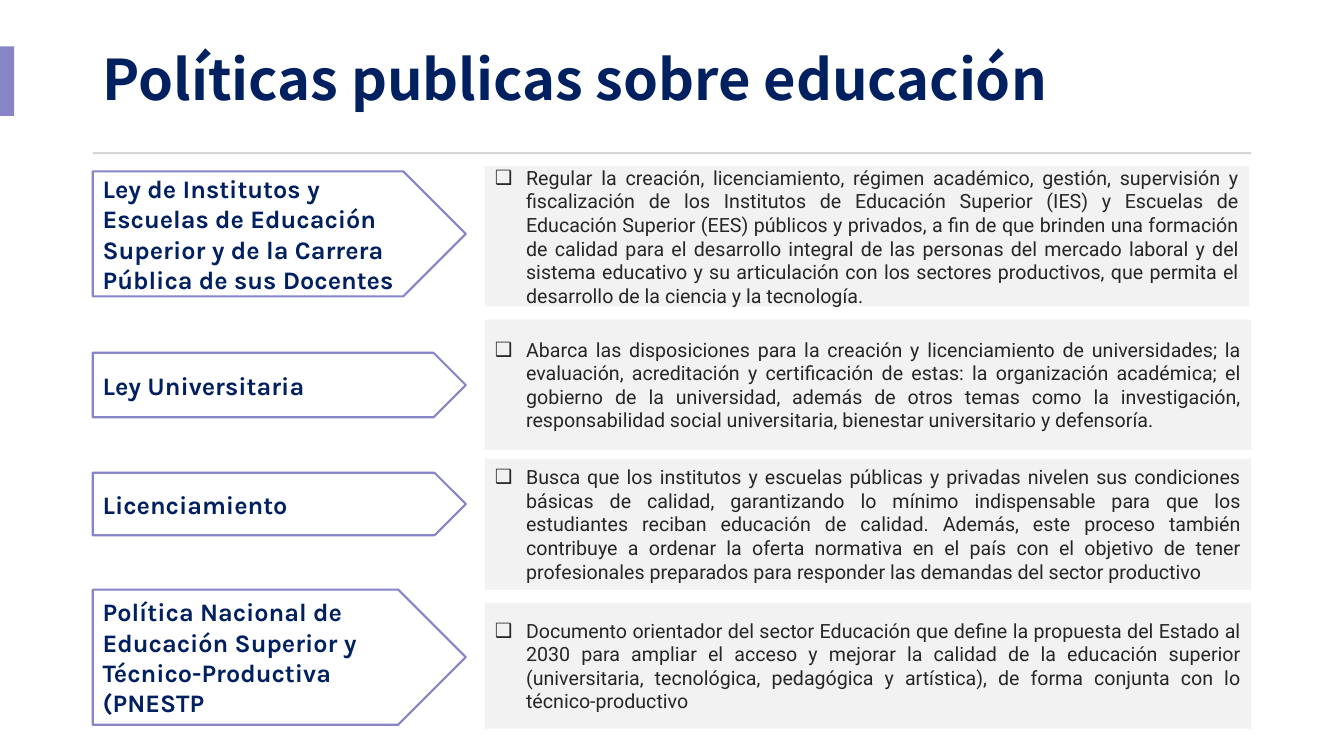
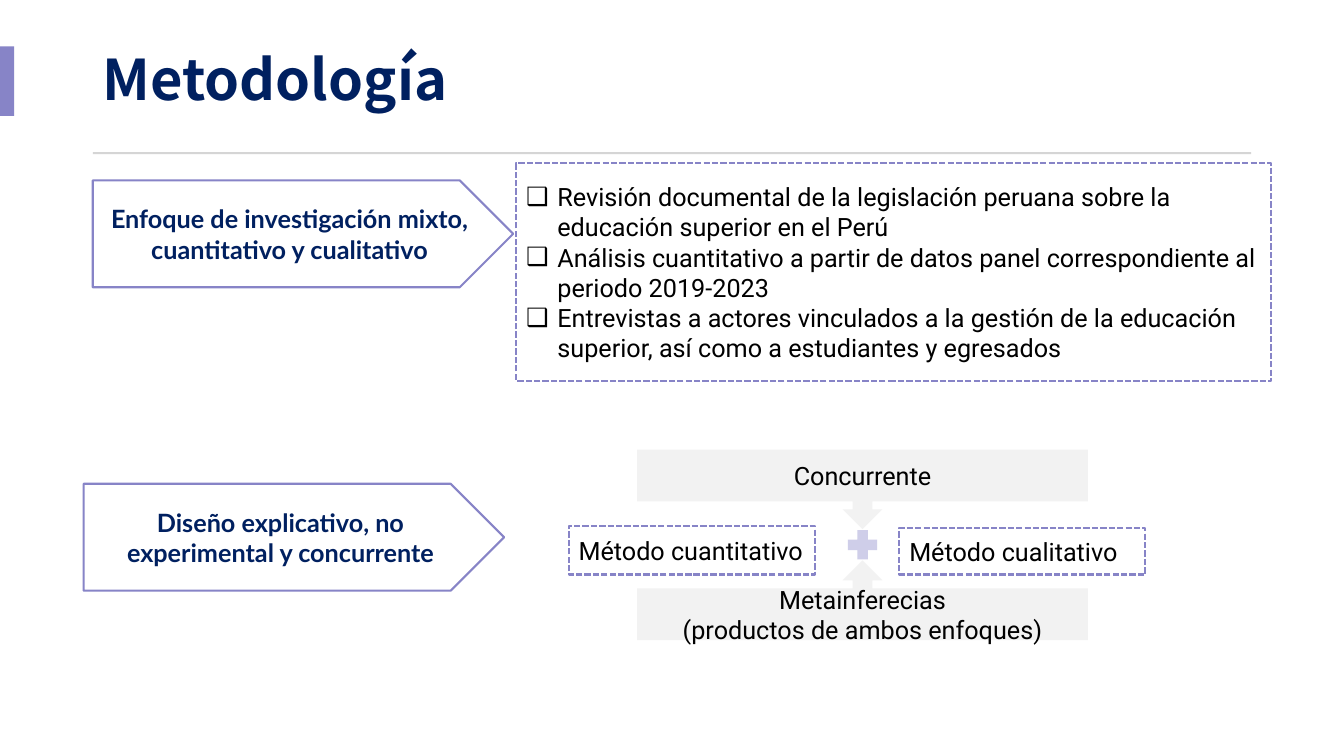
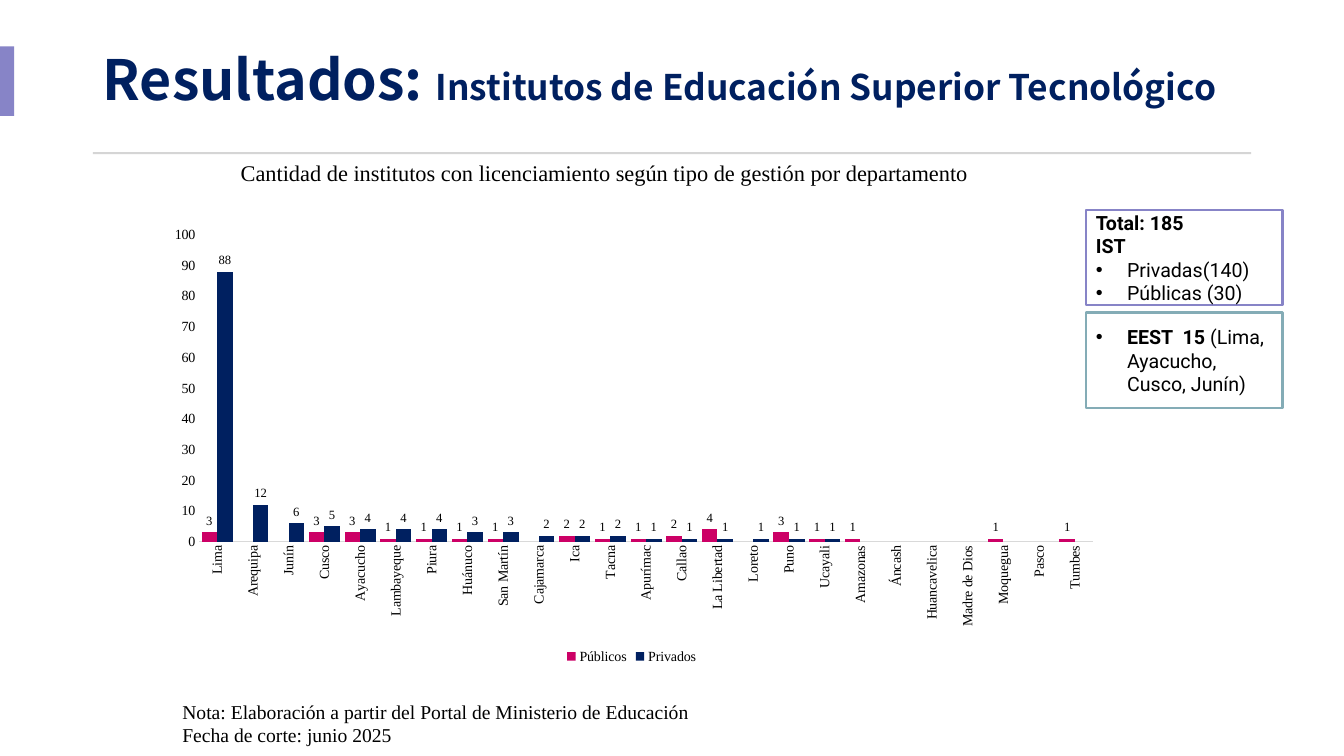
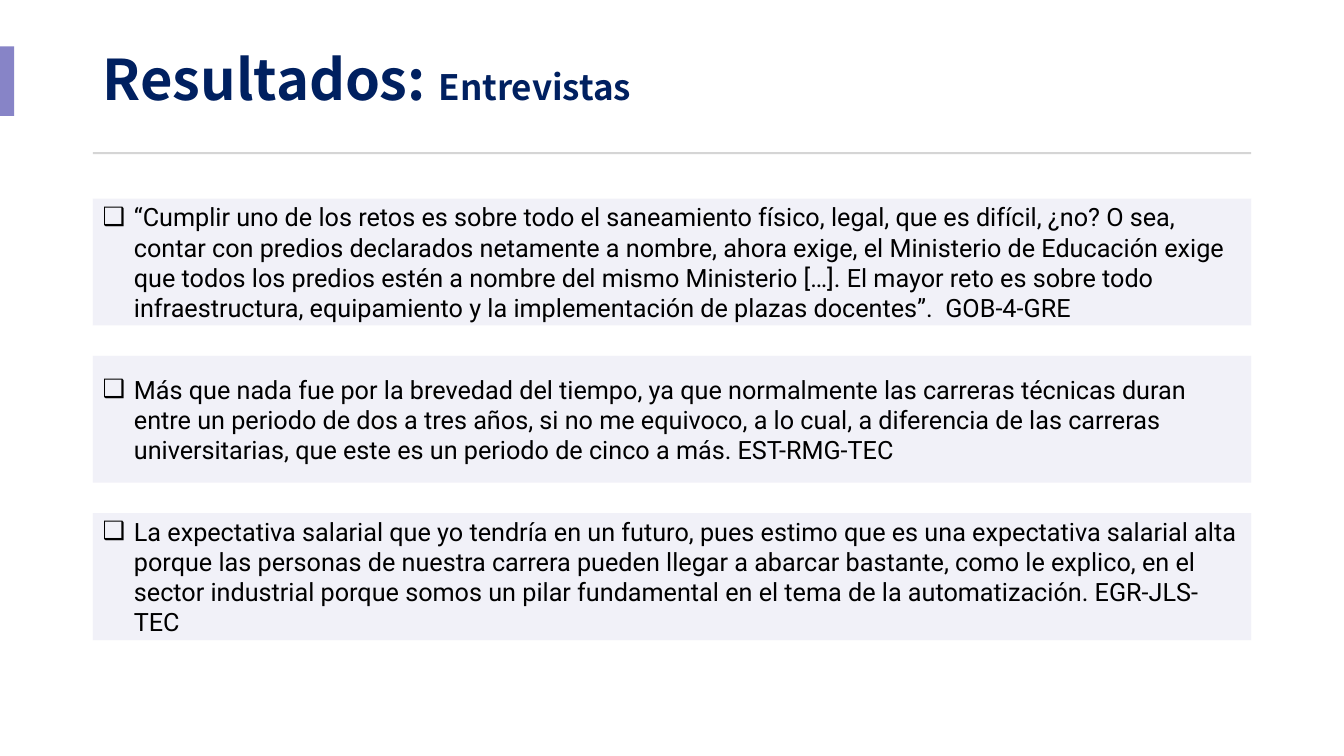
from lxml import etree
from pptx import Presentation
from pptx import util as u
from pptx.chart.data import CategoryChartData
from pptx.dml.color import RGBColor
from pptx.enum import chart as charts, dml, shapes, text
from pptx.oxml import parse_xml
from pptx.oxml.ns import nsdecls, qn

PX = 9144  # EMU in one px, 100 px to the inch
COLORS = {
    "navy": "002060", "violet": "8784C7", "teal": "84ACB6", "pink": "CC0066",
    "rule": "D5D5D5", "axis": "D9D9D9", "panel": "F2F2F2", "lilac": "E7E6F4",
    "plus": "CFCEE9", "white": "FFFFFF", "black": "000000", "ink": "262626",
}
SHAPE = shapes.MSO_SHAPE
LEFT, CENTER, JUSTIFY = text.PP_ALIGN.LEFT, text.PP_ALIGN.CENTER, text.PP_ALIGN.JUSTIFY
BOX_BULLET, DOT_BULLET = "❑", "•"
MARGIN, CONTENT_WIDTH = 92, 1149
SERIF = "Times New Roman"

# arrow label, arrow (top, height), description, panel (top, width, height)
POLICIES = [
    ("Ley de Institutos y Escuelas de Educación Superior y de la Carrera Pública de sus Docentes",
     (170, 124),
     "Regular la creación, licenciamiento, régimen académico, gestión, supervisión y fiscalización de "
     "los Institutos de Educación Superior (IES) y Escuelas de Educación Superior (EES) públicos y "
     "privados, a fin de que brinden una formación de calidad para el desarrollo integral de las "
     "personas del mercado laboral y del sistema educativo y su articulación con los sectores "
     "productivos, que permita el desarrollo de la ciencia y la tecnología.",
     (165, 758, 139)),
    ("Ley Universitaria",
     (350, 64),
     "Abarca las disposiciones para la creación y licenciamiento de universidades; la evaluación, "
     "acreditación y certificación de estas: la organización académica; el gobierno de la "
     "universidad, además de otros temas como la investigación, responsabilidad social "
     "universitaria, bienestar universitario y defensoría.",
     (317, 760, 129)),
    ("Licenciamiento",
     (469, 62),
     "Busca que los institutos y escuelas públicas y privadas nivelen sus condiciones básicas de "
     "calidad, garantizando lo mínimo indispensable para que los estudiantes reciban educación de "
     "calidad. Además, este proceso también contribuye a ordenar la oferta normativa en el país con "
     "el objetivo de tener profesionales preparados para responder las demandas del sector productivo",
     (455, 760, 130)),
    ("Política Nacional de Educación Superior y Técnico-Productiva (PNESTP",
     (585, 134),
     "Documento orientador del sector Educación que define la propuesta del Estado al 2030 para "
     "ampliar el acceso y mejorar la calidad de la educación superior (universitaria, tecnológica, "
     "pedagógica y artística), de forma conjunta con lo técnico-productivo",
     (598, 760, 125)),
]

APPROACHES = [
    ("Enfoque de investigación mixto, cuantitativo y cualitativo", (92, 179, 417, 106)),
    ("Diseño explicativo, no experimental y concurrente", (83, 480, 417, 106)),
]
TECHNIQUES = [
    "Revisión documental de la legislación peruana sobre la educación superior en el Perú",
    "Análisis cuantitativo a partir de datos panel correspondiente al periodo 2019-2023",
    "Entrevistas a actores vinculados a la gestión de la educación superior, así como a "
    "estudiantes y egresados",
]
CALLOUTS = [
    (SHAPE.DOWN_ARROW_CALLOUT, ["Concurrente"], (632, 446, 447, 79)),
    (SHAPE.UP_ARROW_CALLOUT, ["Metainferecias", "(productos de ambos enfoques)"],
     (632, 556, 447, 79)),
]
METHODS = [
    ("Método cuantitativo", (564, 522, 244, 48)),
    ("Método cualitativo", (892, 524, 244, 46)),
]

CHART_TITLE = "Cantidad de institutos con licenciamiento según tipo de gestión por departamento"
CHART_NOTE = ["Nota: Elaboración a partir del Portal de Ministerio de Educación",
              "Fecha de corte: junio 2025"]
DEPARTMENTS = [  # name, public, private
    ("Lima", 3, 88), ("Arequipa", None, 12), ("Junín", None, 6), ("Cusco", 3, 5),
    ("Ayacucho", 3, 4), ("Lambayeque", 1, 4), ("Piura", 1, 4), ("Huánuco", 1, 3),
    ("San Martín", 1, 3), ("Cajamarca", None, 2), ("Ica", 2, 2), ("Tacna", 1, 2),
    ("Apurímac", 1, 1), ("Callao", 2, 1), ("La Libertad", 4, 1), ("Loreto", None, 1),
    ("Puno", 3, 1), ("Ucayali", 1, 1), ("Amazonas", 1, None), ("Áncash", None, None),
    ("Huancavelica", None, None), ("Madre de Dios", None, None), ("Moquegua", 1, None),
    ("Pasco", None, None), ("Tumbes", 1, None),
]
SERIES = [("Públicos", "pink"), ("Privados", "navy")]

QUOTES = [
    "“Cumplir uno de los retos es sobre todo el saneamiento físico, legal, que es difícil, ¿no? O "
    "sea, contar con predios declarados netamente a nombre, ahora exige, el Ministerio de Educación "
    "exige que todos los predios estén a nombre del mismo Ministerio […]. El mayor reto es sobre "
    "todo infraestructura, equipamiento y la implementación de plazas docentes”.  GOB-4-GRE",
    "Más que nada fue por la brevedad del tiempo, ya que normalmente las carreras técnicas duran "
    "entre un periodo de dos a tres años, si no me equivoco, a lo cual, a diferencia de las "
    "carreras universitarias, que este es un periodo de cinco a más. EST-RMG-TEC",
    "La expectativa salarial que yo tendría en un futuro, pues estimo que es una expectativa "
    "salarial alta porque las personas de nuestra carrera pueden llegar a abarcar bastante, como le "
    "explico, en el sector industrial porque somos un pilar fundamental en el tema de la "
    "automatización. EGR-JLS-TEC",
]


def color(name):
    return RGBColor.from_string(COLORS[name])


def px(*lengths):
    return [u.Emu(round(length * PX)) for length in lengths]


def style_font(font, name, size=None, ink="black", bold=None):
    font.name = name
    font.color.rgb = color(ink)
    font.bold = bold
    if size:
        font.size = u.Pt(size)


def add_bullet(para, mark):
    properties = para._p.get_or_add_pPr()
    indent = px(31)[0]
    properties.set("marL", str(indent))
    properties.set("indent", str(-indent))
    etree.SubElement(properties, qn("a:buFont")).set("typeface", "Arial")
    etree.SubElement(properties, qn("a:buChar")).set("char", mark)


def write(frame, lines, font, size, ink="black", bold=None, align=LEFT, bullet=None):
    """Fill a frame; a line is a string or a dict with text, bold and bullet of its own."""
    frame.word_wrap = True
    for index, line in enumerate(lines):
        line = line if isinstance(line, dict) else {"text": line}
        para = frame.paragraphs[0] if index == 0 else frame.add_paragraph()
        para.alignment = align
        mark = line.get("bullet", bullet)
        if mark:
            add_bullet(para, mark)
        style_font(para.font, font, size, ink, line.get("bold", bold))
        if isinstance(line["text"], str):
            para.add_run().text = line["text"]
            continue
        for words, span_bold in line["text"]:
            span = para.add_run()
            span.text = words
            span.font.bold = span_bold


def add_box(holder, kind, place, fill="white", line=None, dashed=False):
    box = holder.add_shape(kind, *px(*place))
    box.shadow.inherit = False
    box.fill.solid()
    box.fill.fore_color.rgb = color(fill)
    if line:
        box.line.color.rgb = color(line)
        box.line.width = u.Pt(1.5)
        if dashed:
            box.line.dash_style = dml.MSO_LINE.SQUARE_DOT
    else:
        box.line.fill.background()
    return box


def add_caption(page, place, lines, size, align=LEFT):
    box = page.shapes.add_textbox(*px(*place))
    write(box.text_frame, lines, SERIF, size, align=align)


def add_page(deck, title_spans, title_width=CONTENT_WIDTH):
    """Add a slide with its title (text, size pairs), side band and rule."""
    page = deck.slides.add_slide(deck.slide_layouts[5])
    title = page.shapes.title
    title.left, title.top, title.width, title.height = px(MARGIN, 27, title_width, 110)
    frame = title.text_frame
    frame.auto_size = text.MSO_AUTO_SIZE.NONE
    frame.vertical_anchor = text.MSO_ANCHOR.MIDDLE
    para = frame.paragraphs[0]
    para.alignment = LEFT
    para.line_spacing = 0.9
    style_font(para.font, "Noto Sans CJK TC", ink="navy", bold=True)
    for words, size in title_spans:
        span = para.add_run()
        span.text = words
        span.font.size = u.Pt(size)
    add_box(page.shapes, SHAPE.RECTANGLE, (0, 46, 14, 69), "violet")
    add_box(page.shapes, SHAPE.RECTANGLE, (MARGIN, 151, CONTENT_WIDTH, 2), "rule")
    return page


def build_policies(deck):
    page = add_page(deck, [("Políticas publicas sobre educación", 40)])
    for label, (top, height), description, (panel_top, width, panel_height) in POLICIES:
        arrow = add_box(page.shapes, SHAPE.PENTAGON, (MARGIN, top, 370, height), line="violet")
        write(arrow.text_frame, [label], "Karla", 18, "navy", bold=True)
        panel = add_box(page.shapes, SHAPE.RECTANGLE,
                        (481, panel_top, width, panel_height), "panel")
        write(panel.text_frame, [description], "Roboto", 14, "ink",
              align=JUSTIFY, bullet=BOX_BULLET)


def build_methodology(deck):
    page = add_page(deck, [("Metodología", 40)])
    for label, place in APPROACHES:
        arrow = add_box(page.shapes, SHAPE.PENTAGON, place, line="violet")
        write(arrow.text_frame, [label], "Lato", 18, "navy", bold=True, align=CENTER)
    techniques = add_box(page.shapes, SHAPE.RECTANGLE, (512, 162, 749, 216),
                         line="violet", dashed=True)
    write(techniques.text_frame, TECHNIQUES, "Roboto", 18, bullet=BOX_BULLET)

    design = page.shapes.add_group_shape().shapes
    for kind, lines, place in CALLOUTS:
        callout = add_box(design, kind, place, "panel")
        write(callout.text_frame, lines, "Roboto", 18, align=CENTER)
    for label, place in METHODS:
        method = add_box(design, SHAPE.RECTANGLE, place, line="violet", dashed=True)
        write(method.text_frame, [label], "Roboto", 18)
        method.text_frame.margin_right = px(5)[0]
    plus = add_box(design, SHAPE.CROSS, (841, 526, 29, 29), "plus")
    plus.adjustments[0] = 0.32


def place_plot(chart, **fractions):
    """Fix the inner plot area at fractions of the chart's size."""
    area = chart._chartSpace.chart.plotArea
    for old in area.findall(qn("c:layout")):
        area.remove(old)
    sizes = "".join(f'<c:{key} val="{value}"/>' for key, value in fractions.items())
    area.insert(0, parse_xml(
        f'<c:layout {nsdecls("c")}><c:manualLayout><c:layoutTarget val="inner"/>'
        f'<c:xMode val="edge"/><c:yMode val="edge"/>{sizes}</c:manualLayout></c:layout>'))


def add_institute_chart(page):
    names, *columns = zip(*DEPARTMENTS)
    data = CategoryChartData()
    data.categories = names
    for (name, _), values in zip(SERIES, columns):
        data.add_series(name, values)
    chart = page.shapes.add_chart(charts.XL_CHART_TYPE.COLUMN_CLUSTERED,
                                  *px(150, 215, 953, 448), data).chart
    chart.has_title = False
    style_font(chart.font, SERIF, 10)
    chart.has_legend = True
    chart.legend.position = charts.XL_LEGEND_POSITION.BOTTOM
    chart.legend.include_in_layout = False
    style_font(chart.legend.font, SERIF, 10)

    for axis in (chart.category_axis, chart.value_axis):
        axis.has_major_gridlines = False
        axis.major_tick_mark = axis.minor_tick_mark = charts.XL_TICK_MARK.NONE
        style_font(axis.tick_labels.font, SERIF, 10)
    chart.category_axis.format.line.color.rgb = color("axis")
    chart.category_axis.format.line.width = u.Pt(0.75)
    chart.category_axis._element.txPr.bodyPr.set("rot", "-5400000")
    chart.value_axis.format.line.fill.background()
    chart.value_axis.minimum_scale, chart.value_axis.maximum_scale = 0, 100
    chart.value_axis.major_unit = 10

    plot = chart.plots[0]
    plot.vary_by_categories = False
    plot.gap_width = 30
    plot.overlap = 0
    for series, (_, fill) in zip(plot.series, SERIES):
        series.format.fill.solid()
        series.format.fill.fore_color.rgb = color(fill)
        labels = series.data_labels
        labels.show_value = True
        labels.position = charts.XL_LABEL_POSITION.OUTSIDE_END
        style_font(labels.font, SERIF, 9)
    place_plot(chart, x=0.05, y=0.04, w=0.93, h=0.68)


def build_institutes(deck):
    page = add_page(deck, [("Resultados: ", 39.6),
                           ("Institutos de Educación Superior Tecnológico", 25.2)], 1164)
    add_institute_chart(page)
    add_caption(page, (123, 153, 953, 37), [CHART_TITLE], 16, CENTER)
    add_caption(page, (171, 689, 695, 57), CHART_NOTE, 14)
    totals = [
        ("violet", 208, [
            {"text": "Total: 185", "bold": True},
            {"text": "IST", "bold": True},
            {"text": "Privadas(140)", "bullet": DOT_BULLET},
            {"text": "Públicas (30)", "bullet": DOT_BULLET}]),
        ("teal", 310, [
            {"text": [("EEST  15 ", True), ("(Lima, Ayacucho, Cusco, Junín)", False)],
             "bullet": DOT_BULLET}]),
    ]
    for line, top, lines in totals:
        box = add_box(page.shapes, SHAPE.RECTANGLE, (1077, top, 195, 95), line=line)
        write(box.text_frame, lines, "Roboto", 14)


def build_interviews(deck):
    page = add_page(deck, [("Resultados: ", 40), ("Entrevistas", 25)])
    for index, quote in enumerate(QUOTES):
        panel = add_box(page.shapes, SHAPE.RECTANGLE,
                        (MARGIN, 197 + 156 * index, CONTENT_WIDTH, 126), "lilac")
        tint = panel._element.spPr.find(qn("a:solidFill"))[0]
        etree.SubElement(tint, qn("a:alpha")).set("val", "55000")
        write(panel.text_frame, [quote], "Roboto", 18, bullet=BOX_BULLET)


def main():
    deck = Presentation()
    deck.slide_width, deck.slide_height = px(1333, 750)
    for build in (build_policies, build_methodology, build_institutes, build_interviews):
        build(deck)
    deck.save("out.pptx")


if __name__ == "__main__":
    main()
